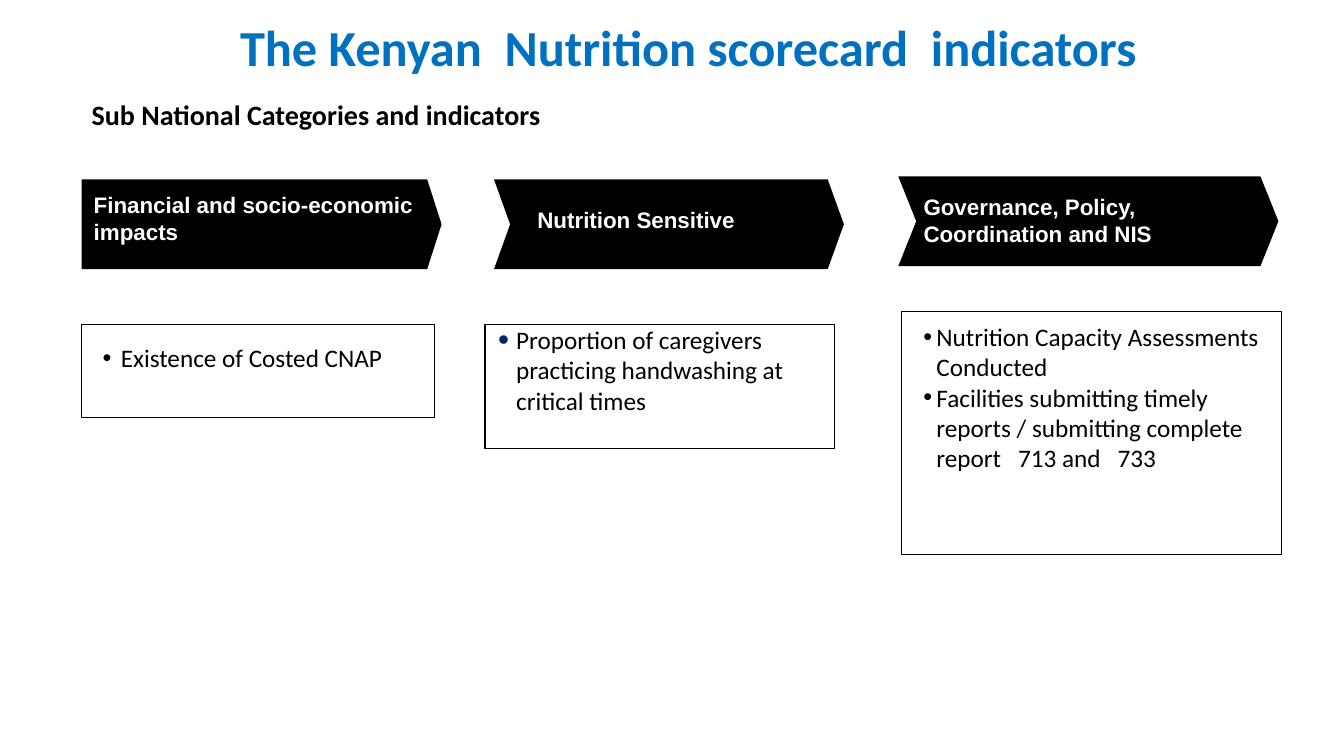
import pptx
import pptx.dml.color
import pptx.enum.shapes
import pptx.enum.text
import pptx.oxml
import pptx.oxml.ns
import pptx.util

PX = 9144  # EMU in one px, at 100 px to the inch
SHAPES = pptx.enum.shapes.MSO_SHAPE
ANCHOR = pptx.enum.text.MSO_ANCHOR
ALIGN = pptx.enum.text.PP_ALIGN
BLACK, WHITE, BLUE, NAVY = "000000", "FFFFFF", "0070C0", "002960"


def color(hex_string):
    return pptx.dml.color.RGBColor.from_string(hex_string)


def px(*lengths):
    return [pptx.util.Emu(length * PX) for length in lengths]


class ScorecardSlide:
    """Holds the text style and the slide being filled."""

    heading_font, body_font = "Arial", "Calibri"
    heading_size, body_size = 16, 18

    def __init__(self, presentation):
        self.slide = presentation.slides.add_slide(presentation.slide_layouts[1])

    def style(self, paragraph, name, size, hex_string, bold=False):
        font = paragraph.font
        font.name, font.size, font.bold = name, pptx.util.Pt(size), bold
        font.color.rgb = color(hex_string)

    def placeholder(self, index, box, text, size, hex_string, align):
        shape = self.slide.placeholders[index]
        shape.left, shape.top, shape.width, shape.height = px(*box)
        shape.text_frame.text = text
        paragraph = shape.text_frame.paragraphs[0]
        paragraph.alignment, paragraph.line_spacing = align, 0.9
        paragraph.space_before = pptx.util.Pt(0)
        self.bullet(paragraph, 0, 0, None)
        self.style(paragraph, self.body_font, size, hex_string, bold=True)

    def shape(self, kind, box, fill, line=None):
        shape = self.slide.shapes.add_shape(kind, *px(*box))
        shape.shadow.inherit = False
        shape.fill.solid()
        shape.fill.fore_color.rgb = color(fill)
        if line:
            shape.line.color.rgb = color(line)
            shape.line.width = pptx.util.Pt(1)
        else:
            shape.line.fill.background()
        return shape

    def arrow(self, kind, box, point):
        shape = self.shape(kind, box, BLACK)
        shape.adjustments[0] = point

    def text_box(self, box):
        return self.slide.shapes.add_textbox(*px(*box))

    def frame(self, shape, anchor, inset_x, inset_y):
        frame = shape.text_frame
        frame.word_wrap, frame.vertical_anchor = True, anchor
        frame.margin_left, frame.margin_right = px(inset_x, inset_x)
        frame.margin_top, frame.margin_bottom = px(inset_y, inset_y)
        return frame

    def heading(self, box, text):
        frame = self.frame(self.text_box(box), ANCHOR.MIDDLE, 0, 0)
        frame.text = text
        self.style(frame.paragraphs[0], self.heading_font, self.heading_size, WHITE, bold=True)

    def bullet(self, paragraph, margin, hanging, character="•", hex_string=None, percent=100):
        properties = paragraph._p.get_or_add_pPr()
        left, indent = px(margin, -hanging)
        properties.set("marL", str(left))
        properties.set("indent", str(indent))

        def add(tag, parent=properties, **attributes):
            element = pptx.oxml.parse_xml(f"<a:{tag} {pptx.oxml.ns.nsdecls('a')}/>")
            for key, value in attributes.items():
                element.set(key, value)
            parent.append(element)
            return element

        if character is None:
            add("buNone")
            return
        if hex_string:
            add("srgbClr", add("buClr"), val=hex_string)
        add("buSzPct", val=str(percent * 1000))
        add("buFont", typeface="Arial")
        add("buChar", char=character)

    def bullets(self, shape, items, margin, hanging, inset=(10, 5), **bullet_style):
        frame = self.frame(shape, ANCHOR.TOP, *inset)
        frame.text = "\n".join(items)
        for paragraph in frame.paragraphs:
            paragraph.alignment = ALIGN.LEFT
            self.bullet(paragraph, margin, hanging, **bullet_style)
            self.style(paragraph, self.body_font, self.body_size, BLACK)


def main():
    presentation = pptx.Presentation()
    presentation.slide_width, presentation.slide_height = px(1333, 750)
    scorecard = ScorecardSlide(presentation)

    # Title and subtitle
    scorecard.placeholder(0, (71, 18, 1224, 64), "The Kenyan  Nutrition scorecard  indicators",
                          36, BLUE, ALIGN.CENTER)
    scorecard.placeholder(1, (81, 95, 945, 41), "Sub National Categories and indicators",
                          20, BLACK, ALIGN.LEFT)

    # Category arrows with their headings
    categories = [
        (SHAPES.PENTAGON, (81, 178, 357, 89), 0.16,
         (93, 189, 320, 54), "Financial and socio-economic impacts"),
        (SHAPES.CHEVRON, (490, 178, 347, 89), 0.18,
         (533, 199, 219, 37), "Nutrition Sensitive"),
        (SHAPES.CHEVRON, (891, 175, 377, 89), 0.2,
         (916, 191, 270, 54), "Governance, Policy, Coordination and NIS"),
    ]
    for kind, arrow_box, point, heading_box, heading in categories:
        scorecard.arrow(kind, arrow_box, point)
        scorecard.heading(heading_box, heading)

    # Indicator boxes
    financial, sensitive, governance = [
        scorecard.shape(SHAPES.RECTANGLE, box, WHITE, BLACK)
        for box in [(81, 322, 350, 92), (481, 322, 347, 123), (894, 309, 377, 241)]
    ]

    # Indicators
    scorecard.bullets(scorecard.text_box((92, 335, 310, 40)),
                      ["Existence of Costed CNAP"], 18, 18)
    scorecard.bullets(sensitive,
                      ["Proportion of caregivers practicing handwashing at critical times"],
                      31, 18, inset=(0, 0), hex_string=NAVY, percent=125)
    scorecard.bullets(scorecard.text_box((901, 314, 364, 162)),
                      ["Nutrition Capacity Assessments Conducted",
                       "Facilities submitting timely reports / submitting complete report   713 and   733"],
                      18, 13)

    presentation.save("out.pptx")


if __name__ == "__main__":
    main()
